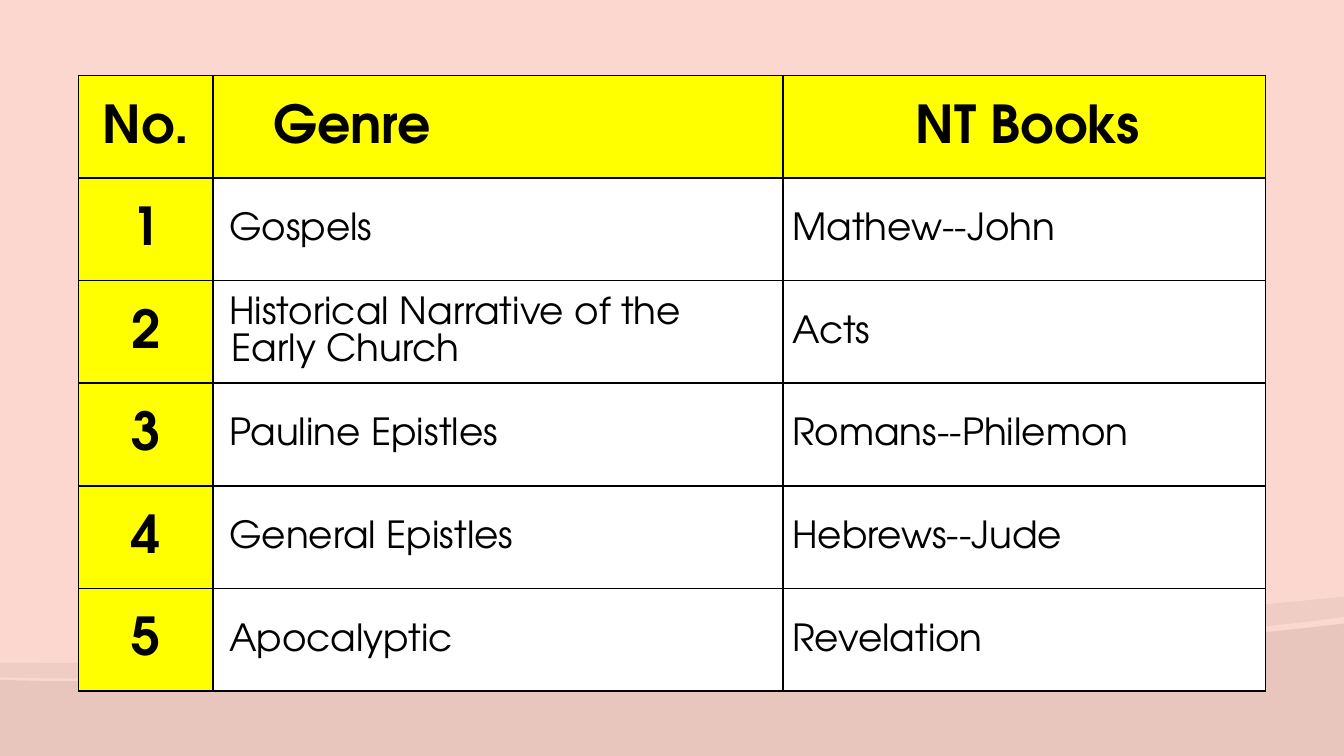
from dataclasses import dataclass

from lxml import etree
from pptx import Presentation
from pptx.dml.color import RGBColor
from pptx.enum.text import MSO_ANCHOR, PP_ALIGN
from pptx.oxml.ns import qn
from pptx.util import Inches, Pt

MID = MSO_ANCHOR.MIDDLE
LEFT, CENTER = PP_ALIGN.LEFT, PP_ALIGN.CENTER
WIDE = 10
HIGH = WIDE * 9 / 16
FINE = 1000  # pen units to the inch


@dataclass(frozen=True)
class Theme:
    back: str = "FCD7CF"
    ink: str = "000000"
    mark: str = "FFFF00"
    plain: str = "FFFFFF"
    font: str = "TeX Gyre Adventor"
    head: int = 28
    body: int = 20
    rule: int = 1


@dataclass(frozen=True)
class Wave:
    start: tuple
    steps: tuple  # two numbers make a line, six make a curve
    alpha: int


@dataclass(frozen=True)
class Look:
    size: int
    bold: bool
    fill: str
    align: PP_ALIGN = LEFT
    margin: float = 0
    indent: float = 0


THEME = Theme()

WAVES = (
    Wave((WIDE, 4.64), ((WIDE, HIGH), (0, HIGH), (0, 5.06),
                        (2.64, 5.12, 7.82, 4.91, WIDE, 4.64)), 8),
    Wave((WIDE, 4.44), ((WIDE, 4.59), (9.42, 4.67, 8.62, 4.74, 7.72, 4.81),
                        (5.23, 4.98, 1.93, 5.08, 0, 5.04), (0, 4.93),
                        (4.89, 4.97, 7.28, 4.7, WIDE, 4.44)), 5),
)

ROWS = (
    ("No.", "Genre", "NT Books"),
    ("1", "Gospels", "Mathew--John"),
    ("2", "Historical Narrative of the Early Church", "Acts"),
    ("3", "Pauline Epistles", "Romans--Philemon"),
    ("4", "General Epistles", "Hebrews--Jude"),
    ("5", "Apocalyptic", "Revelation"),
)
COLS = (1, 4.24, 3.59)
SPOT = ((WIDE - sum(COLS)) / 2, HIGH / 10)
TALL = 4.58

# Cell looks
MARK = Look(THEME.head, True, THEME.mark, CENTER)
GENRE = Look(THEME.head, True, THEME.mark, margin=0.38)
BOOKS = Look(THEME.head, True, THEME.mark, CENTER, 0.25, -0.2)
ITEM = Look(THEME.body, False, THEME.plain, margin=0.25, indent=-0.2)
LONG = Look(THEME.body, False, THEME.plain, margin=0.07, indent=-0.02)
PLAIN = Look(THEME.body, False, THEME.plain)


def rgb(code: str) -> RGBColor:
    return RGBColor.from_string(code)


def assign(item, values: dict) -> None:
    for name, value in values.items():
        setattr(item, name, value)


def curve(start: tuple, step: tuple, count: int = 24) -> list:
    """Points along a cubic curve."""
    a, b, c, d = start, step[:2], step[2:4], step[4:]
    points = []
    for n in range(1, count + 1):
        t = n / count
        u = 1 - t
        points.append(tuple(
            u**3 * a[k] + 3 * u * u * t * b[k] + 3 * u * t * t * c[k] + t**3 * d[k]
            for k in (0, 1)))
    return points


def draw_wave(slide, wave: Wave) -> None:
    points = [wave.start]
    for step in wave.steps:
        points += [step] if len(step) == 2 else curve(points[-1], step)
    first, *rest = [(x * FINE, y * FINE) for x, y in points]
    pen = slide.shapes.build_freeform(*first, scale=Inches(1) / FINE)
    pen.add_line_segments(rest, close=True)
    shape = pen.convert_to_shape()
    shape.shadow.inherit = False
    shape.line.fill.background()
    shape.fill.solid()
    shape.fill.fore_color.rgb = rgb(THEME.ink)
    color = shape._element.spPr.find(".//" + qn("a:srgbClr"))
    etree.SubElement(color, qn("a:alpha"), val=str(wave.alpha * 1000))


def add_rules(cell) -> None:
    props = cell._tc.get_or_add_tcPr()
    for side in ("a:lnL", "a:lnR", "a:lnT", "a:lnB"):
        line = etree.SubElement(props, qn(side), w=str(Pt(THEME.rule)))
        fill = etree.SubElement(line, qn("a:solidFill"))
        etree.SubElement(fill, qn("a:srgbClr"), val=THEME.ink)


def pick_look(row: int, col: int) -> Look:
    if row == 0:
        return (MARK, GENRE, BOOKS)[col]
    return (MARK, LONG if row == 2 else ITEM, PLAIN)[col]


def fill_cell(cell, text: str, look: Look) -> None:
    add_rules(cell)
    cell.fill.solid()
    cell.fill.fore_color.rgb = rgb(look.fill)
    assign(cell, {"text": text, "vertical_anchor": MID,
                  "margin_left": Inches(0.07), "margin_right": Inches(0.07),
                  "margin_top": 0, "margin_bottom": 0})
    para = cell.text_frame.paragraphs[0]
    assign(para, {"alignment": look.align, "line_spacing": 1.07})
    props = para._p.get_or_add_pPr()
    props.set("marL", str(Inches(look.margin)))
    props.set("indent", str(Inches(look.indent)))
    font = para.runs[0].font
    assign(font, {"name": THEME.font, "size": Pt(look.size), "bold": look.bold})
    font.color.rgb = rgb(THEME.ink)


def draw_table(slide) -> None:
    frame = slide.shapes.add_table(
        len(ROWS), len(COLS), *map(Inches, (*SPOT, sum(COLS), TALL)))
    table = frame.table
    assign(table, {"first_row": False, "horz_banding": False})
    for col, width in zip(table.columns, COLS):
        col.width = Inches(width)
    for r, texts in enumerate(ROWS):
        table.rows[r].height = Inches(TALL / len(ROWS))
        for c, text in enumerate(texts):
            fill_cell(table.cell(r, c), text, pick_look(r, c))


def main() -> None:
    deck = Presentation()
    assign(deck, {"slide_width": Inches(WIDE), "slide_height": Inches(HIGH)})
    slide = deck.slides.add_slide(deck.slide_layouts[6])

    # Background and waves
    slide.background.fill.solid()
    slide.background.fill.fore_color.rgb = rgb(THEME.back)
    for wave in WAVES:
        draw_wave(slide, wave)

    # Table of genres
    draw_table(slide)
    deck.save("out.pptx")


if __name__ == "__main__":
    main()
